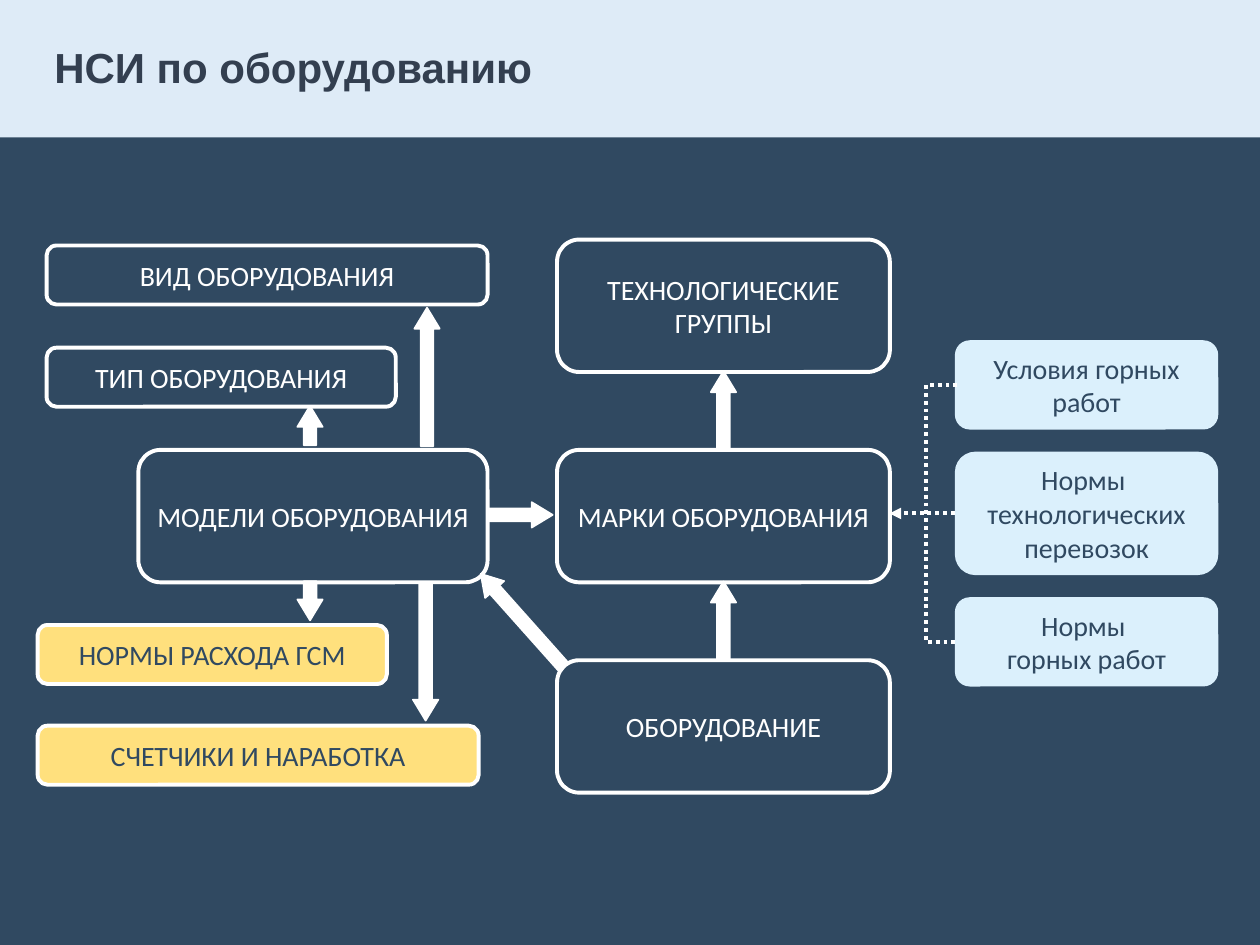
from dataclasses import dataclass

from lxml import etree
from pptx import Presentation
from pptx.dml.color import RGBColor
from pptx.enum.dml import MSO_LINE
from pptx.enum.shapes import MSO_CONNECTOR, MSO_SHAPE
from pptx.enum.text import MSO_ANCHOR, PP_ALIGN
from pptx.oxml.ns import qn
from pptx.util import Cm, Pt

ROUNDED, RECTANGLE, UP_ARROW = MSO_SHAPE.ROUNDED_RECTANGLE, MSO_SHAPE.RECTANGLE, MSO_SHAPE.UP_ARROW
STRAIGHT, ELBOW = MSO_CONNECTOR.STRAIGHT, MSO_CONNECTOR.ELBOW
DOTTED = MSO_LINE.ROUND_DOT
MIDDLE = MSO_ANCHOR.MIDDLE
LEFT, CENTER = PP_ALIGN.LEFT, PP_ALIGN.CENTER
LEFT_SIDE = 1
UP, RIGHT, DOWN, UP_LEFT = 0, 90, 180, 318.3

COLORS = {
    "navy": "304961",
    "band": "DEEBF7",
    "title": "333F50",
    "white": "FFFFFF",
    "yellow": "FFE07D",
    "sky": "DBF0FC",
}
STYLES = {
    "entity": {"fill": "navy", "line": "white", "color": "white"},
    "record": {"fill": "yellow", "line": "white", "color": "navy"},
    "norm": {"fill": "sky", "line": None, "color": "navy"},
}


@dataclass
class Box:
    left: float
    top: float
    width: float
    height: float

    def inner(self, left, top, width, height):
        return Box(self.left + left, self.top + top, width, height)

    def lengths(self):
        return Cm(self.left), Cm(self.top), Cm(self.width), Cm(self.height)


def rgb(name):
    return RGBColor.from_string(COLORS[name])


def write_text(frame, text, font="Calibri", size=16, color="white", bold=False,
               align=CENTER, spacing=None):
    frame.word_wrap = True
    frame.vertical_anchor = MIDDLE
    para = frame.paragraphs[0]
    para.text = text
    para.alignment = align
    para.line_spacing = spacing
    for span in para.runs:
        span.font.name = font
        span.font.size = Pt(size)
        span.font.bold = bold
        span.font.color.rgb = rgb(color)


def add_block(page, kind, box, fill, line=None, width=2.25):
    shape = page.shapes.add_shape(kind, *box.lengths())
    shape.shadow.inherit = False
    shape.fill.solid()
    shape.fill.fore_color.rgb = rgb(fill)
    if line:
        shape.line.color.rgb = rgb(line)
        shape.line.width = Pt(width)
    else:
        shape.line.fill.background()
    return shape


def add_card(page, box, text, style):
    look = STYLES[style]
    card = add_block(page, ROUNDED, box, look["fill"], look["line"])
    write_text(card.text_frame, text, color=look["color"])
    return card


def add_arrow(page, center_x, center_y, length, rotation, width=0.51):
    box = Box(center_x - width / 2, center_y - length / 2, width, length)
    arrow = add_block(page, UP_ARROW, box, "white", "white", 1)
    arrow.adjustments[0], arrow.adjustments[1] = 0.5, 0.826
    arrow.rotation = rotation


def add_dotted_line(page, kind, start_x, start_y, end_x, end_y):
    line = page.shapes.add_connector(kind, Cm(start_x), Cm(start_y), Cm(end_x), Cm(end_y))
    line.line.color.rgb = rgb("white")
    line.line.width = Pt(2.25)
    line.line.dash_style = DOTTED
    etree.SubElement(line._element.spPr, qn("a:effectLst"))
    return line


def draw_header(page, box):
    add_block(page, RECTANGLE, box, "band")
    title = page.shapes.title
    page.shapes._spTree.append(title._element)
    title.left, title.top, title.width, title.height = box.inner(0.84, 0.41, 15.39, 1.98).lengths()
    write_text(title.text_frame, "НСИ по оборудованию", font="Arial", size=24,
               color="title", bold=True, align=LEFT, spacing=0.9)


def draw_models(page, box):
    short, long, low, high = 7.04, 8.89, 1.19, 2.67
    cards = [
        ("ВИД ОБОРУДОВАНИЯ", 0.18, 0, long, low, "entity"),
        ("ТИП ОБОРУДОВАНИЯ", 0.18, 2.06, short, low, "entity"),
        ("МОДЕЛИ ОБОРУДОВАНИЯ", 2.03, 4.12, short, high, "entity"),
        ("НОРМЫ РАСХОДА ГСМ", 0, 7.65, short, low, "record"),
        ("СЧЕТЧИКИ И НАРАБОТКА", 0, 9.68, long, low, "record"),
    ]
    for text, left, top, width, height, style in cards:
        add_card(page, box.inner(left, top, width, height), text, style)
    arrows = [
        (7.82, 8.18, 2.79, DOWN),
        (5.49, 7.16, 0.79, DOWN),
        (5.49, 3.63, 0.79, UP),
        (7.85, 2.65, 2.79, UP),
    ]
    for left, top, length, rotation in arrows:
        add_arrow(page, box.left + left, box.top + top, length, rotation)


def draw_equipment(page, box):
    names = ["ТЕХНОЛОГИЧЕСКИЕ ГРУППЫ", "МАРКИ ОБОРУДОВАНИЯ", "ОБОРУДОВАНИЕ"]
    height = 2.67
    step = (box.height - height) / (len(names) - 1)
    for row, name in enumerate(names):
        add_card(page, box.inner(0, row * step, box.width, height), name, "entity")
        if row:
            gap_middle = box.top + row * step - (step - height) / 2
            add_arrow(page, box.left + box.width / 2, gap_middle, 1.6, UP)
    add_arrow(page, box.left - 0.74, box.top + 5.55, 1.3, RIGHT)
    add_arrow(page, box.left - 0.71, box.top + 7.67, 2.49, UP_LEFT)


def draw_norms(page, box):
    norms = [
        ("Условия горных работ", 1.8),
        ("Нормы \vтехнологических перевозок", 2.49),
        ("Нормы \vгорных работ", 1.8),
    ]
    gap = (box.height - sum(height for _, height in norms)) / (len(norms) - 1)
    top = 0
    cards = []
    for text, height in norms:
        cards.append(add_card(page, box.inner(0, top, box.width, height), text, "norm"))
        top += height + gap

    overlap, reach = 0.05, 0.58
    bracket = add_dotted_line(page, ELBOW, box.left + overlap, box.top + 0.9,
                              box.left, box.top + box.height - 0.9)
    guides = bracket._element.spPr.find(qn("a:prstGeom")).get_or_add_avLst()
    bend = round((reach + overlap) / overlap * 100000)
    etree.SubElement(guides, qn("a:gd"), name="adj1", fmla=f"val {bend}")

    middle = box.top + box.height / 2
    pointer = add_dotted_line(page, STRAIGHT, box.left, middle, box.left - 1.32, middle)
    pointer.begin_connect(cards[1], LEFT_SIDE)
    etree.SubElement(pointer.line._get_or_add_ln(), qn("a:tailEnd"), type="triangle")


def main():
    deck = Presentation()
    deck.slide_width, deck.slide_height = Cm(25.4), Cm(19.05)
    page = deck.slides.add_slide(deck.slide_layouts[5])
    page.background.fill.solid()
    page.background.fill.fore_color.rgb = rgb("navy")
    draw_header(page, Box(0, 0, 25.4, 2.77))
    draw_models(page, Box(0.76, 4.95, 9.07, 10.87))
    draw_equipment(page, Box(11.23, 4.83, 6.71, 11.15))
    draw_norms(page, Box(19.25, 6.86, 5.31, 6.98))
    deck.save("out.pptx")


if __name__ == "__main__":
    main()
